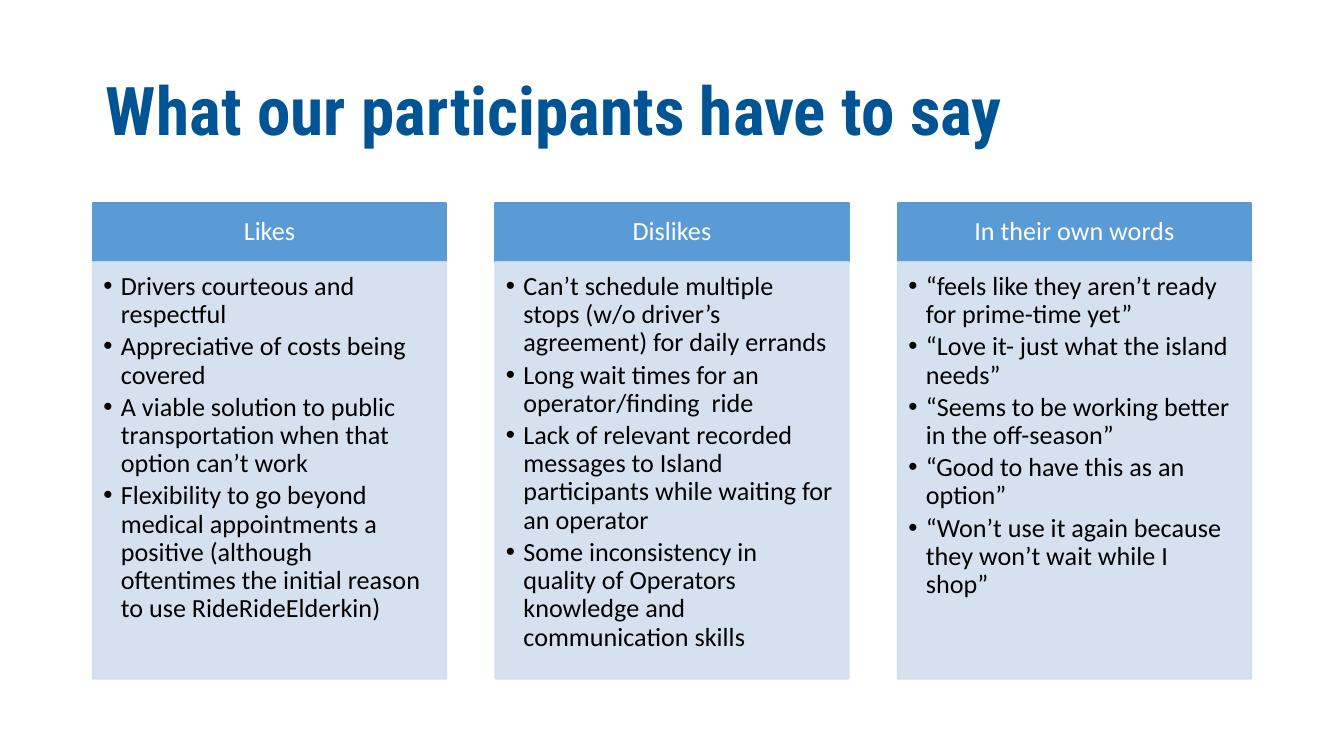
from dataclasses import dataclass

from lxml.etree import SubElement
from pptx import Presentation
from pptx.dml.color import RGBColor as RGB
from pptx.enum.shapes import MSO_SHAPE as Preset
from pptx.enum.text import MSO_ANCHOR as Anchor, PP_ALIGN as Align
from pptx.oxml.ns import qn
from pptx.util import Inches, Pt


@dataclass(frozen=True)
class Theme:
    title_color: RGB = RGB.from_string("005493")
    header_fill: RGB = RGB.from_string("5B9BD5")
    panel_fill: RGB = RGB.from_string("D2DEEF")
    header_text: RGB = RGB.from_string("FFFFFF")
    body_text: RGB = RGB.from_string("000000")
    title_font: str = "Roboto Condensed"
    body_font: str = "Calibri"
    title_size: int = 36
    body_size: int = 14


theme = Theme()


def add_run(paragraph, text, font, size, color, bold=False):
    paragraph.line_spacing = 0.9
    run = paragraph.add_run()
    run.text = text
    run.font.name = font
    run.font.size = Pt(size)
    run.font.color.rgb = color
    run.font.bold = bold


def add_box(slide, left, top, width, height, color, insets, anchor):
    shape = slide.shapes.add_shape(
        Preset.RECTANGLE, Inches(left), Inches(top), Inches(width), Inches(height))
    shape.shadow.inherit = False
    shape.fill.solid()
    shape.fill.fore_color.rgb = color
    shape.line.color.rgb = color
    shape.line.width = Pt(1)
    frame = shape.text_frame
    frame.word_wrap = True
    frame.vertical_anchor = anchor
    frame.margin_left, frame.margin_top, frame.margin_right, frame.margin_bottom = map(Inches, insets)
    return shape


columns = {
    "Likes": [
        "Drivers courteous and respectful",
        "Appreciative of costs being covered",
        "A viable solution to public transportation when that option can’t work",
        "Flexibility to go beyond medical appointments a positive "
        "(although oftentimes the initial reason to use RideRideElderkin)",
    ],
    "Dislikes": [
        "Can’t schedule multiple stops (w/o driver’s agreement) for daily errands",
        "Long wait times for an operator/finding  ride",
        "Lack of relevant recorded messages to Island participants while waiting for an operator",
        "Some inconsistency in quality of Operators knowledge and communication skills",
    ],
    "In their own words": [
        "“feels like they aren’t ready for prime-time yet”",
        "“Love it- just what the island needs”",
        "“Seems to be working better in the off-season”",
        "“Good to have this as an option”",
        "“Won’t use it again because they won’t wait while I shop”",
    ],
}

presentation = Presentation()
presentation.slide_width = Inches(10)
presentation.slide_height = Inches(10) * 9 // 16
slide = presentation.slides.add_slide(presentation.slide_layouts[6])

margin, content_width = 0.69, 8.62
title = slide.shapes.add_textbox(
    Inches(margin), Inches(0.3), Inches(content_width), Inches(1.09))
title.text_frame.word_wrap = True
title.text_frame.vertical_anchor = Anchor.MIDDLE
add_run(title.text_frame.paragraphs[0], "What our participants have to say",
        theme.title_font, theme.title_size, theme.title_color, bold=True)

column_width = 2.63
header_top, header_height, panel_height = 1.51, 0.44, 3.1
bullet_indent = 0.13
step = (content_width - column_width) / (len(columns) - 1)

for index, (heading, points) in enumerate(columns.items()):
    left = margin + index * step
    header = add_box(slide, left, header_top, column_width, header_height,
                     theme.header_fill, (0.11, 0.06, 0.11, 0.06), Anchor.MIDDLE)
    paragraph = header.text_frame.paragraphs[0]
    paragraph.alignment = Align.CENTER
    add_run(paragraph, heading, theme.body_font, theme.body_size, theme.header_text)

    panel = add_box(slide, left, header_top + header_height, column_width, panel_height,
                    theme.panel_fill, (0.08, 0.08, 0.11, 0.12), Anchor.TOP)
    for color in panel._element.spPr.iter(qn("a:srgbClr")):
        SubElement(color, qn("a:alpha"), val="90000")

    frame = panel.text_frame
    for number, point in enumerate(points):
        paragraph = frame.add_paragraph() if number else frame.paragraphs[0]
        paragraph.alignment = Align.LEFT
        paragraph.level = 1
        paragraph.space_after = Pt(0.15 * theme.body_size)
        add_run(paragraph, point, theme.body_font, theme.body_size, theme.body_text)
        properties = paragraph._p.get_or_add_pPr()
        properties.set("marL", str(Inches(bullet_indent)))
        properties.set("indent", str(Inches(-bullet_indent)))
        SubElement(properties, qn("a:buFont"), typeface="Arial")
        SubElement(properties, qn("a:buChar"), char="•")

presentation.save("out.pptx")
